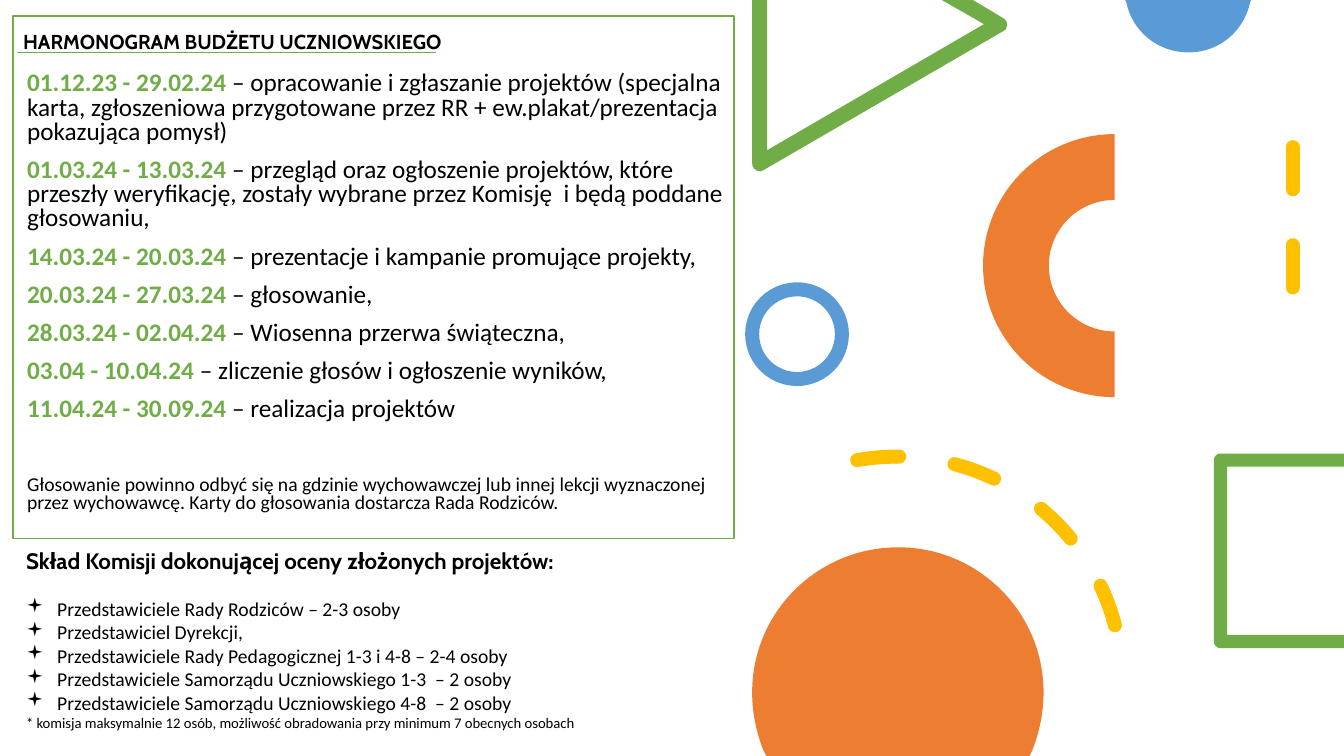
from dataclasses import dataclass

from lxml import etree
from pptx import Presentation
from pptx import util as u
from pptx.dml import color
from pptx.enum import dml, shapes, text
from pptx.oxml import ns
from pptx.shapes import autoshape, connector
from pptx.slide import Slide

COLORS = {"green": "70AD47", "blue": "5B9BD5", "orange": "ED7D31",
          "yellow": "FFC000", "black": "000000"}
HEADING_FONT, BODY_FONT = "Cabin", "Calibri"

Point = tuple[float, float]
Box = tuple[float, float, float, float]


@dataclass(frozen=True)
class Span:
    wording: str
    size: float = 14
    font: str = BODY_FONT
    color: str = "black"
    bold: bool = False


@dataclass(frozen=True)
class Line:
    spans: tuple[Span, ...]
    before: float = 0
    spacing: float = 1
    bullet: str = ""


@dataclass(frozen=True)
class Outline:
    """A closed contour: one point per straight step, three per Bezier step."""
    color: str
    start: Point
    steps: list[tuple[Point, ...]]


@dataclass(frozen=True)
class Stroke:
    color: str
    width: float
    dashed: bool = False


def rgb(name: str) -> color.RGBColor:
    return color.RGBColor.from_string(COLORS[name])


def straight(*points: Point) -> list[tuple[Point, ...]]:
    return [(point,) for point in points]


def apply_stroke(drawn: autoshape.Shape | connector.Connector, stroke: Stroke) -> None:
    drawn.line.color.rgb = rgb(stroke.color)
    drawn.line.width = u.Pt(stroke.width)
    if stroke.dashed:
        drawn.line.dash_style = dml.MSO_LINE.DASH
        drawn.line._get_or_add_ln().set("cap", "rnd")


def add_preset(slide: Slide, preset: shapes.MSO_SHAPE, box: Box, fill: str = "",
               stroke: Stroke | None = None, rotation: float = 0) -> None:
    drawn = slide.shapes.add_shape(preset, *map(u.Inches, box))
    drawn.shadow.inherit = False
    drawn.rotation = rotation
    if fill:
        drawn.fill.solid()
        drawn.fill.fore_color.rgb = rgb(fill)
    else:
        drawn.fill.background()
    if stroke:
        apply_stroke(drawn, stroke)
    else:
        drawn.line.fill.background()


def add_outline(slide: Slide, outline: Outline) -> None:
    builder = slide.shapes.build_freeform(*map(u.Inches, outline.start))
    builder.add_line_segments([(u.Inches(x), u.Inches(y)) for step in outline.steps for x, y in step])
    drawn = builder.convert_to_shape()
    segments = iter(list(drawn._element.iter(ns.qn("a:lnTo"))))
    for step in outline.steps:
        pieces = [next(segments) for _ in step]
        if len(pieces) == 3:
            curve = etree.Element(ns.qn("a:cubicBezTo"))
            pieces[0].addprevious(curve)
            for piece in pieces:
                curve.append(piece[0])
                piece.getparent().remove(piece)
    drawn.shadow.inherit = False
    drawn.fill.solid()
    drawn.fill.fore_color.rgb = rgb(outline.color)
    drawn.line.fill.background()


def add_line(slide: Slide, start: Point, end: Point, stroke: Stroke) -> None:
    drawn = slide.shapes.add_connector(shapes.MSO_CONNECTOR.STRAIGHT, *map(u.Inches, start + end))
    apply_stroke(drawn, stroke)
    etree.SubElement(drawn._element.spPr, ns.qn("a:effectLst"))


def add_text(slide: Slide, box: Box, lines: list[Line],
             anchor: text.MSO_ANCHOR = text.MSO_ANCHOR.TOP) -> None:
    frame = slide.shapes.add_textbox(*map(u.Inches, box)).text_frame
    frame.word_wrap = True
    frame.vertical_anchor = anchor
    for index, line in enumerate(lines):
        paragraph = frame.add_paragraph() if index else frame.paragraphs[0]
        paragraph.line_spacing = line.spacing
        paragraph.space_before = u.Pt(line.before)
        if line.bullet:
            properties = paragraph._p.get_or_add_pPr()
            properties.set("marL", str(u.Inches(0.31)))
            properties.set("indent", str(u.Inches(-0.31)))
            etree.SubElement(properties, ns.qn("a:buFont"), typeface="Wingdings")
            etree.SubElement(properties, ns.qn("a:buChar"), char=line.bullet)
        for span in line.spans:
            run = paragraph.add_run()
            run.text = span.wording
            run.font.size = u.Pt(span.size)
            run.font.name = span.font
            run.font.bold = span.bold
            run.font.color.rgb = rgb(span.color)


STAGES = [
    ("01.12.23 - 29.02.24", "opracowanie i zgłaszanie projektów (specjalna karta, zgłoszeniowa "
     "przygotowane przez RR + ew.plakat/prezentacja pokazująca pomysł)"),
    ("01.03.24 - 13.03.24", "przegląd oraz ogłoszenie projektów, które przeszły weryfikację, "
     "zostały wybrane przez Komisję  i będą poddane głosowaniu,"),
    ("14.03.24 - 20.03.24", "prezentacje i kampanie promujące projekty,"),
    ("20.03.24 - 27.03.24", "głosowanie,"),
    ("28.03.24 - 02.04.24", "Wiosenna przerwa świąteczna,"),
    ("03.04 - 10.04.24", "zliczenie głosów i ogłoszenie wyników,"),
    ("11.04.24 - 30.09.24", "realizacja projektów"),
]
VOTING_NOTE = ("Głosowanie powinno odbyć się na gdzinie wychowawczej lub innej lekcji wyznaczonej "
               "przez wychowawcę. Karty do głosowania dostarcza Rada Rodziców.")
MEMBERS = [
    "Przedstawiciele Rady Rodziców – 2-3 osoby",
    "Przedstawiciel Dyrekcji,",
    "Przedstawiciele Rady Pedagogicznej 1-3 i 4-8 – 2-4 osoby",
    "Przedstawiciele Samorządu Uczniowskiego 1-3  – 2 osoby",
    "Przedstawiciele Samorządu Uczniowskiego 4-8  – 2 osoby",
]
QUORUM_NOTE = "* komisja maksymalnie 12 osób, możliwość obradowania przy minimum 7 obecnych osobach"

BLUE_DISC = Outline("blue", (11.16, 0), [
    *straight((12.41, 0), (12.4, 0.02)),
    ((12.34, 0.31), (12.09, 0.52), (11.79, 0.52)),
    ((11.48, 0.52), (11.23, 0.31), (11.17, 0.02))])
TRIANGLE = Outline("green", (7.46, 0), [
    *straight((7.61, 0), (7.61, 1.49), (9.76, 0.24), (9.34, 0), (9.65, 0), (9.95, 0.18)),
    ((9.99, 0.2), (10, 0.25), (9.98, 0.28)),
    ((9.98, 0.29), (9.97, 0.3), (9.95, 0.31)),
    *straight((7.57, 1.69)),
    ((7.56, 1.69), (7.55, 1.7), (7.54, 1.7)),
    ((7.49, 1.7), (7.46, 1.66), (7.46, 1.62))])
SQUARE = Outline("green", (12.1, 4.5), [
    *straight((13.33, 4.5), (13.33, 4.63), (12.17, 4.63), (12.17, 6.3),
              (13.33, 6.3), (13.33, 6.43), (12.1, 6.43)),
    ((12.07, 6.43), (12.04, 6.4), (12.04, 6.37)),
    *straight((12.04, 4.56)),
    ((12.04, 4.53), (12.07, 4.5), (12.1, 4.5))])
ORANGE_DISC = Outline("orange", (8.91, 5.43), [
    ((9.7, 5.43), (10.35, 6.07), (10.35, 6.87)),
    ((10.35, 7.07), (10.31, 7.26), (10.24, 7.44)),
    *straight((10.21, 7.5), (7.6, 7.5), (7.57, 7.44)),
    ((7.5, 7.26), (7.46, 7.07), (7.46, 6.87)),
    ((7.46, 6.07), (8.11, 5.43), (8.91, 5.43))])


def add_decorations(slide: Slide) -> None:
    dashes = Stroke("yellow", 10, dashed=True)
    add_outline(slide, BLUE_DISC)
    add_preset(slide, shapes.MSO_SHAPE.OVAL, (7.46, 2.87, 0.89, 0.89), stroke=Stroke("blue", 10))
    add_preset(slide, shapes.MSO_SHAPE.BLOCK_ARC, (9.75, 1.33, 2.61, 2.61), "orange", rotation=270)
    add_outline(slide, TRIANGLE)
    add_line(slide, (12.82, 1.46), (12.82, 3.2), dashes)
    add_outline(slide, SQUARE)
    add_preset(slide, shapes.MSO_SHAPE.ARC, (6.66, 4.53, 4.47, 4.47), stroke=dashes, rotation=349.9)
    add_outline(slide, ORANGE_DISC)


def add_content(slide: Slide) -> None:
    title = Span("HARMONOGRAM BUDŻETU UCZNIOWSKIEGO", 14.4, HEADING_FONT, bold=True)
    schedule = [Line((Span(f"{period} ", 18, color="green", bold=True), Span(f"– {stage}", 18)), 10, 0.8)
                for period, stage in STAGES]
    voting = Line((Span(VOTING_NOTE),), 38, 0.8)
    committee = Span("Skład Komisji dokonującej oceny złożonych projektów:", 16, HEADING_FONT, bold=True)
    members = [Line((Span(member),), 0 if index else 16, bullet="▪")
               for index, member in enumerate(MEMBERS)]
    quorum = Line((Span(QUORUM_NOTE, 10.5),))

    add_text(slide, (0.13, 0.33, 6.99, 0.2), [Line((title,), spacing=0.9)], text.MSO_ANCHOR.MIDDLE)
    add_text(slide, (0.17, 0.67, 7.15, 4.76), [*schedule, voting])
    add_text(slide, (0.16, 5.38, 7.13, 1.96), [Line((committee,)), *members, quorum])
    add_preset(slide, shapes.MSO_SHAPE.RECTANGLE, (0.13, 0.16, 7.15, 5.18), stroke=Stroke("green", 1))
    add_line(slide, (0.17, 0.52), (4.32, 0.52), Stroke("green", 0.5))


if __name__ == "__main__":
    deck = Presentation()
    deck.slide_width, deck.slide_height = u.Inches(13.33), u.Inches(7.5)
    page = deck.slides.add_slide(deck.slide_layouts[6])
    add_decorations(page)
    add_content(page)
    deck.save("out.pptx")
